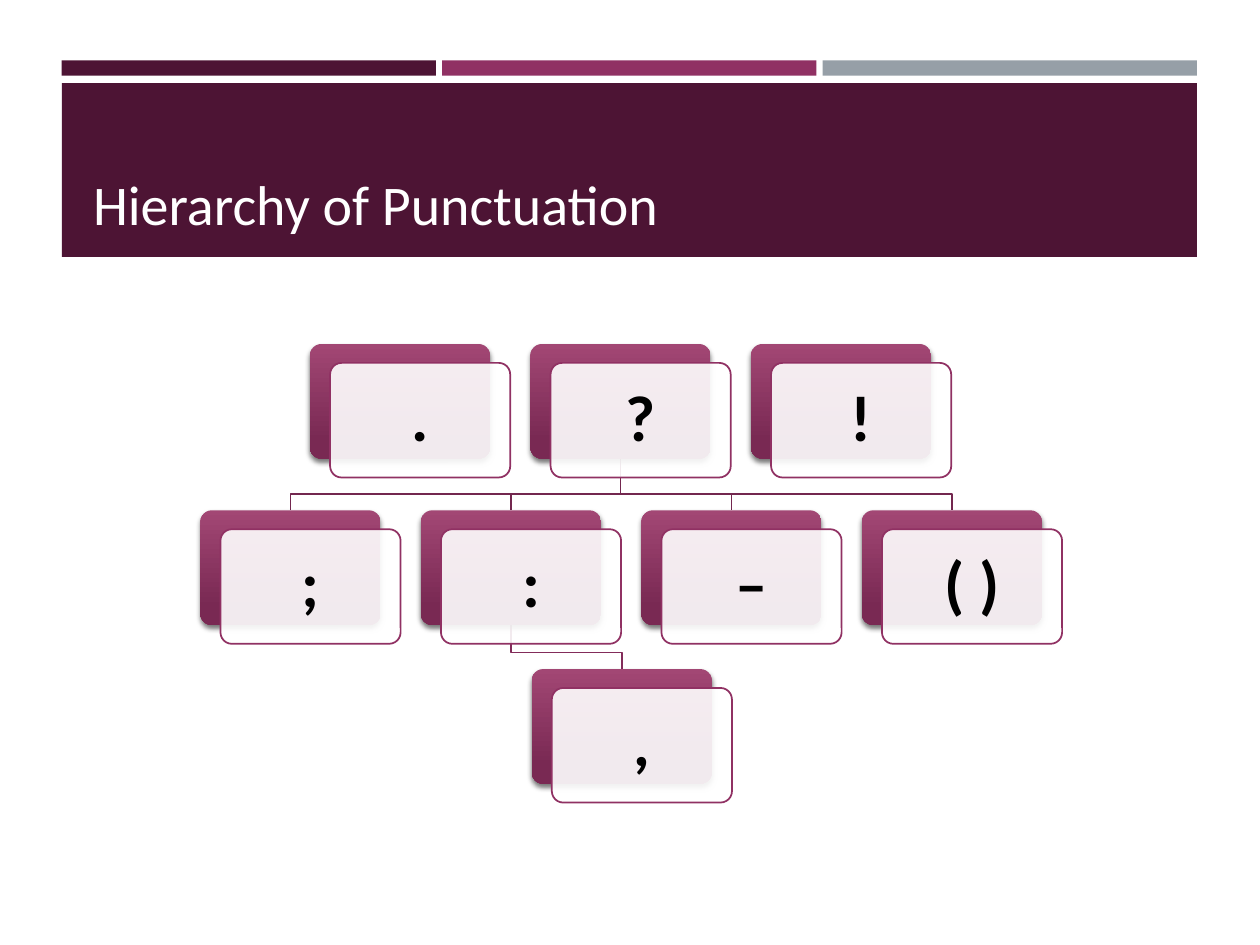
import pptx
import pptx.util
import pptx.dml.color
import pptx.enum.shapes
import pptx.enum.text
import pptx.oxml
import pptx.oxml.ns
from lxml import etree

Inches = pptx.util.Inches
Pt = pptx.util.Pt
RGBColor = pptx.dml.color.RGBColor
Shape = pptx.enum.shapes.MSO_SHAPE
Align = pptx.enum.text.PP_ALIGN
Anchor = pptx.enum.text.MSO_ANCHOR
qn = pptx.oxml.ns.qn

# Colours
PLUM = RGBColor(0x4D, 0x14, 0x34)
ROSE = RGBColor(0x90, 0x31, 0x63)
GREY = RGBColor(0x96, 0x9F, 0xA7)
LIGHT = RGBColor(0xA2, 0x47, 0x74)
DARK = RGBColor(0x79, 0x29, 0x53)
LINK = RGBColor(0x73, 0x27, 0x4F)
SUBLINK = RGBColor(0x83, 0x2C, 0x5A)
WHITE = RGBColor(0xFF, 0xFF, 0xFF)
BLACK = RGBColor(0, 0, 0)

# Card grid, in inches
CARD_W, CARD_H = 1.43, 0.91
STEP = 1.75
SHIFT = 0.15
BEND = 0.13


def write(frame, text, size=32, color=BLACK, bold=False,
          align=Align.LEFT, anchor=Anchor.MIDDLE, inset=None, space=1.0):
    frame.word_wrap = True
    frame.vertical_anchor = anchor
    if inset is not None:
        frame.margin_left = frame.margin_right = Inches(inset)
        frame.margin_top = frame.margin_bottom = Inches(inset)
    para = frame.paragraphs[0]
    para.alignment = align
    para.line_spacing = space
    run = para.add_run()
    run.text = text
    font = run.font
    font.name, font.size, font.bold = "Calibri", Pt(size), bold
    font.color.rgb = color


class Deck:
    def __init__(self):
        self.show = pptx.Presentation()
        self.show.slide_width = Inches(10)
        self.show.slide_height = Inches(7.5)
        self.slide = self.show.slides.add_slide(self.show.slide_layouts[6])

    def block(self, kind, left, top, width, height, fill=None):
        shape = self.slide.shapes.add_shape(
            kind, Inches(left), Inches(top), Inches(width), Inches(height))
        shape.shadow.inherit = False
        shape.line.fill.background()
        if fill is not None:
            shape.fill.solid()
            shape.fill.fore_color.rgb = fill
        return shape

    def title(self, text, left, top, width, height):
        box = self.slide.shapes.add_textbox(
            Inches(left), Inches(top), Inches(width), Inches(height))
        write(box.text_frame, text, color=WHITE, anchor=Anchor.BOTTOM)

    def link(self, start, end, color):
        """Elbow from the foot of one card to the head of another."""
        x1, y1 = start[0] + CARD_W / 2, start[1] + CARD_H
        x2, y2 = end[0] + CARD_W / 2, end[1]
        mid = y2 - BEND
        path = self.slide.shapes.build_freeform(Inches(x1), Inches(y1))
        path.add_line_segments(
            [(Inches(x), Inches(y)) for x, y in ((x1, mid), (x2, mid), (x2, y2))],
            close=False)
        line = path.convert_to_shape()
        line.shadow.inherit = False
        line.fill.background()
        line.line.color.rgb = color
        line.line.width = Pt(1)

    def card(self, text, left, top):
        # Shaded back plate
        back = self.block(Shape.ROUNDED_RECTANGLE, left, top, CARD_W, CARD_H)
        back.adjustments[0] = 0.1
        back.fill.gradient()
        back.fill.gradient_angle = 270
        for stop, (color, spot) in zip(back.fill.gradient_stops,
                                       ((LIGHT, 0), (DARK, 0.84))):
            stop.color.rgb = color
            stop.position = spot
        glow = etree.SubElement(
            back.element.spPr.find(qn("a:effectLst")), qn("a:outerShdw"),
            blurRad=str(Pt(3)), dist=str(Pt(2)), dir="5400000", rotWithShape="0")
        tint = etree.SubElement(glow, qn("a:srgbClr"), val=str(BLACK))
        etree.SubElement(tint, qn("a:alpha"), val="55000")

        # Translucent front plate with the mark
        front = self.block(Shape.ROUNDED_RECTANGLE, left + SHIFT + 0.01,
                           top + SHIFT, CARD_W, CARD_H, WHITE)
        front.adjustments[0] = 0.1
        solid = front.element.spPr.find(qn("a:solidFill"))
        etree.SubElement(solid[0], qn("a:alpha"), val="90000")
        front.line.color.rgb = ROSE
        front.line.width = Pt(1)
        write(front.text_frame, text, size=37, bold=True,
              align=Align.CENTER, inset=0.15, space=0.9)


def main():
    deck = Deck()

    # Header bars and title band
    for i, color in enumerate((PLUM, ROSE, GREY)):
        deck.block(Shape.RECTANGLE, 0.49 + i * 3.02, 0.48, 2.97, 0.12, color)
    deck.block(Shape.RECTANGLE, 0.49, 0.66, 9.01, 1.38, PLUM)
    deck.title("Hierarchy of Punctuation", 0.64, 0.75, 8.74, 1.18)

    # Card places by row
    rows = (((".", "?", "!"), 2.46, 2.73),
            ((";", ":", "–", "( )"), 1.59, 4.05),
            ((",",), 4.22, 5.31))
    spots = {mark: (left + i * STEP, top)
             for marks, left, top in rows for i, mark in enumerate(marks)}

    # Links lie behind the cards
    for mark in rows[1][0]:
        deck.link(spots["?"], spots[mark], LINK)
    deck.link(spots[":"], spots[","], SUBLINK)

    for mark, (left, top) in spots.items():
        deck.card(mark, left, top)

    deck.show.save("out.pptx")


if __name__ == "__main__":
    main()
